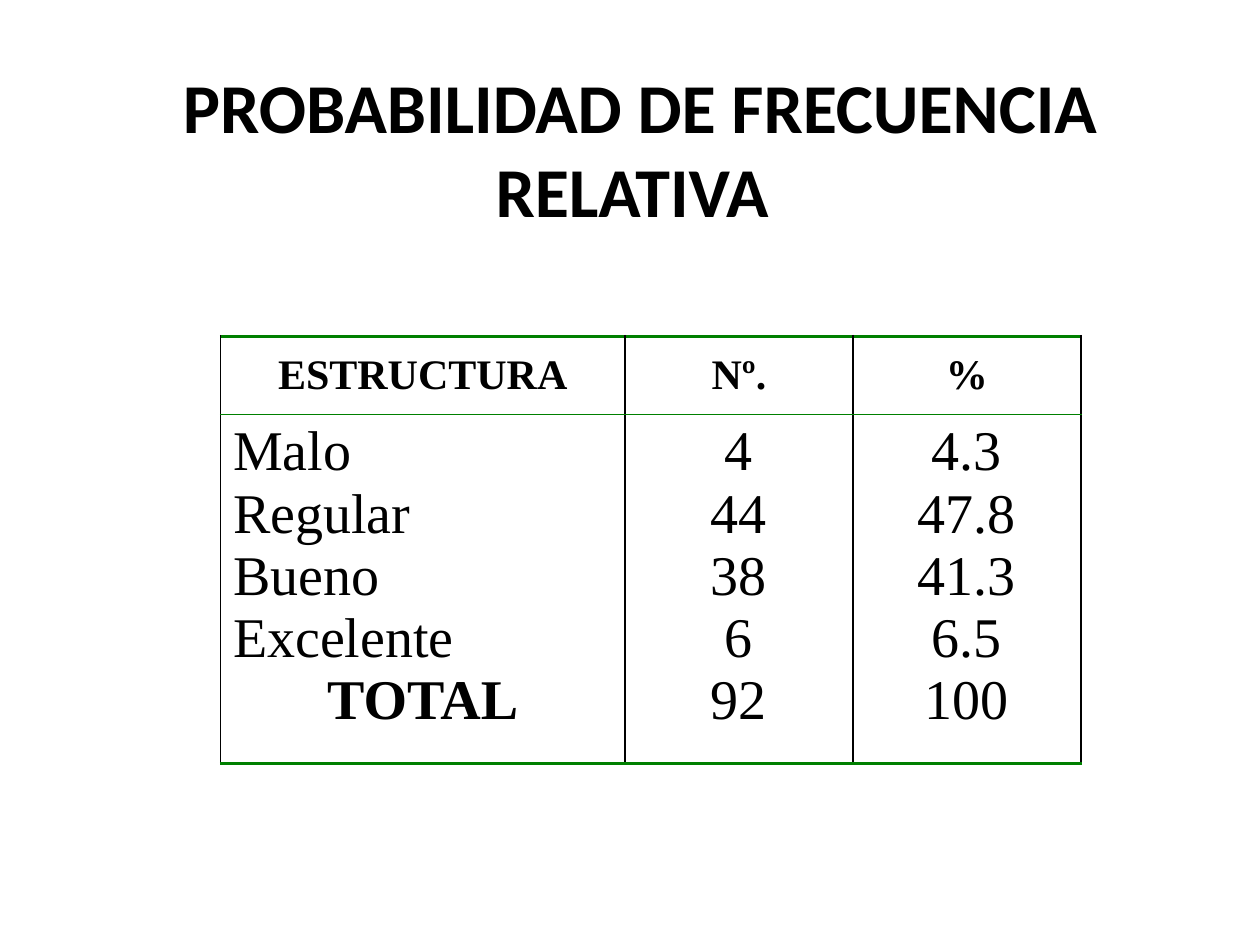
from lxml import etree
from pptx import Presentation
from pptx.dml.color import RGBColor
from pptx.enum.text import MSO_ANCHOR, PP_ALIGN
from pptx.oxml.ns import qn
from pptx.util import Inches, Pt

LEFT, CENTER = PP_ALIGN.LEFT, PP_ALIGN.CENTER
TOP, MIDDLE = MSO_ANCHOR.TOP, MSO_ANCHOR.MIDDLE
BLACK, GREEN = "000000", "008000"

TITLE = "PROBABILIDAD DE FRECUENCIA RELATIVA "
HEADERS = ["ESTRUCTURA", "Nº.", "%"]
RECORDS = [
    ("Malo", "4", "4.3"),
    ("Regular", "44", "47.8"),
    ("Bueno", "38", "41.3"),
    ("Excelente", "6", "6.5"),
    ("TOTAL", "92", "100"),
]
COLUMN_WIDTHS = [3.21, 1.81, 1.81]
ROW_HEIGHTS = [0.62, 2.77]
RULE_WIDTHS = [2, 1, 2]


def add_text(paragraph, text, font, size, bold, alignment=CENTER):
    """Add one formatted run to a paragraph."""
    paragraph.alignment = alignment
    run = paragraph.add_run()
    run.text = text
    run.font.name = font
    run.font.size = Pt(size)
    run.font.bold = bold
    run.font.color.rgb = RGBColor.from_string(BLACK)


def set_borders(cell, row):
    """Draw thin black sides and green rules above and below a cell."""
    borders = [
        ("a:lnL", BLACK, 0.75),
        ("a:lnR", BLACK, 0.75),
        ("a:lnT", GREEN, RULE_WIDTHS[row]),
        ("a:lnB", GREEN, RULE_WIDTHS[row + 1]),
    ]
    properties = cell._tc.get_or_add_tcPr()
    for position, (tag, color, width) in enumerate(borders):
        line = etree.Element(qn(tag), w=str(Pt(width)))
        fill = etree.SubElement(line, qn("a:solidFill"))
        etree.SubElement(fill, qn("a:srgbClr"), val=color)
        properties.insert(position, line)


def fill_cell(cell, row, lines, size):
    """Write (text, bold, alignment) lines into a bordered cell."""
    cell.fill.background()
    cell.vertical_anchor = TOP if row else MIDDLE
    frame = cell.text_frame
    for index, (text, bold, alignment) in enumerate(lines):
        paragraph = frame.add_paragraph() if index else frame.paragraphs[0]
        add_text(paragraph, text, "Times New Roman", size, bold, alignment)
    set_borders(cell, row)


def add_title(slide):
    """Add the centred slide title."""
    box = slide.shapes.add_textbox(Inches(0.58), Inches(0.42), Inches(9), Inches(1.5))
    frame = box.text_frame
    frame.word_wrap = True
    frame.vertical_anchor = MIDDLE
    add_text(frame.paragraphs[0], TITLE, "Calibri", 40, True)


def add_frequency_table(slide):
    """Add the header row and one tall row holding every record."""
    table = slide.shapes.add_table(
        len(ROW_HEIGHTS), len(HEADERS), Inches(1.75), Inches(2.67),
        Inches(sum(COLUMN_WIDTHS)), Inches(sum(ROW_HEIGHTS)),
    ).table
    table.horz_banding = False
    for row, height in zip(table.rows, ROW_HEIGHTS):
        row.height = Inches(height)
    for index, (header, values) in enumerate(zip(HEADERS, zip(*RECORDS))):
        table.columns[index].width = Inches(COLUMN_WIDTHS[index])
        fill_cell(table.cell(0, index), 0, [(header, True, CENTER)], 24)
        lines = [
            (value, value == "TOTAL", LEFT if index == 0 and value != "TOTAL" else CENTER)
            for value in values
        ]
        fill_cell(table.cell(1, index), 1, lines, 32)


def main():
    """Build and save the slide."""
    presentation = Presentation()
    presentation.slide_width, presentation.slide_height = Inches(10), Inches(7.5)
    slide = presentation.slides.add_slide(presentation.slide_layouts[6])
    add_title(slide)
    add_frequency_table(slide)
    presentation.save("out.pptx")


if __name__ == "__main__":
    main()
